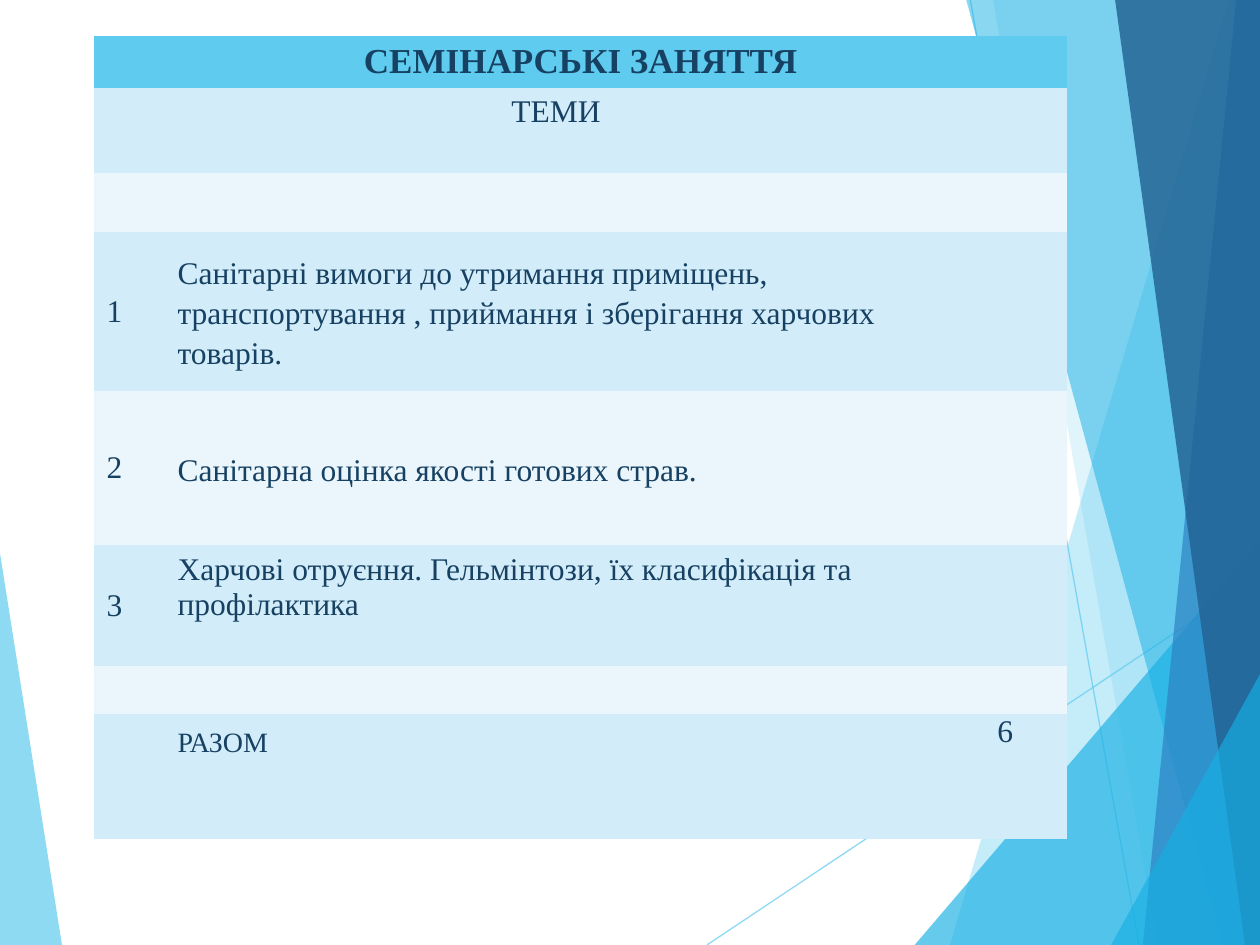
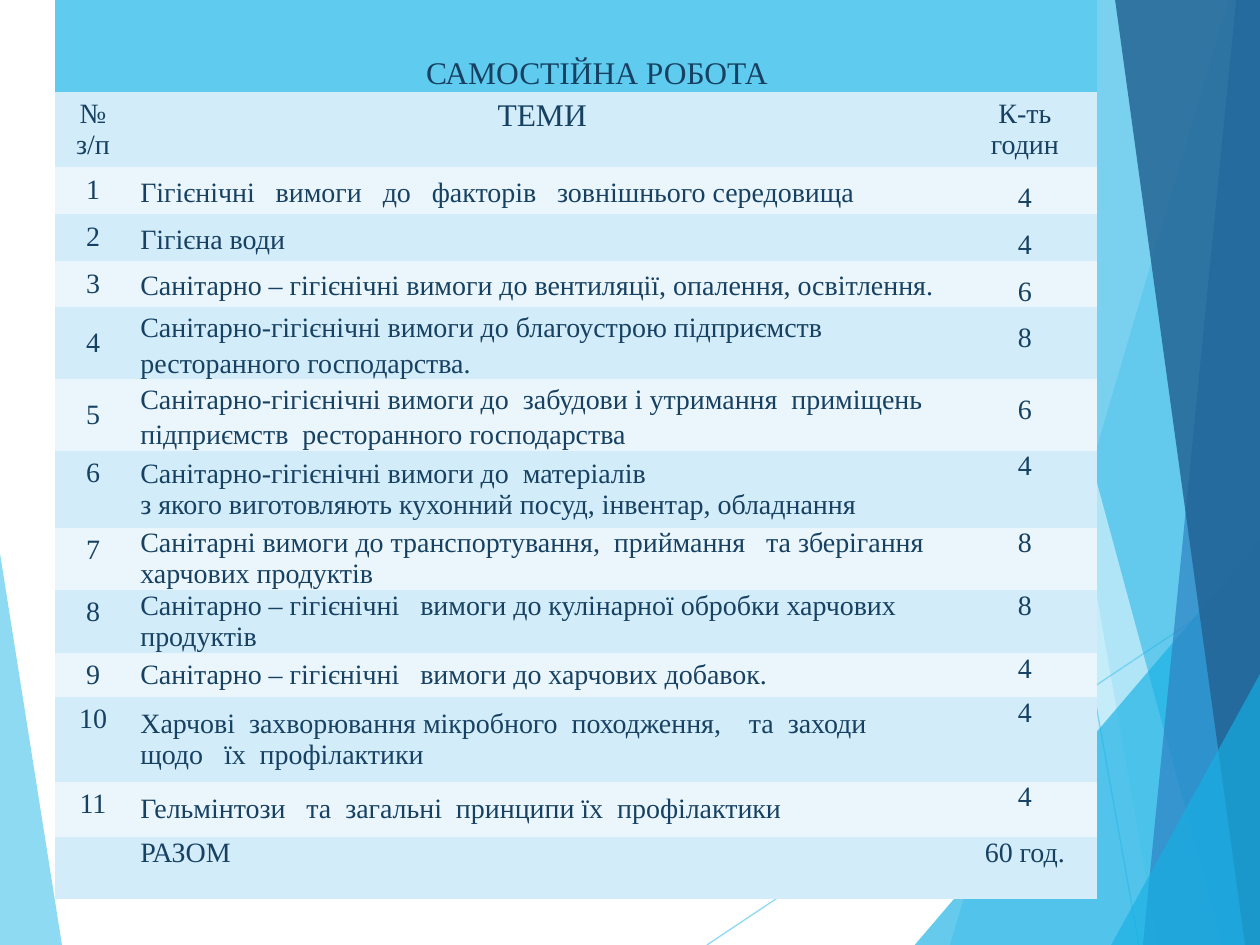
"""Build two slides listing the seminar topics and the independent work."""
from dataclasses import dataclass, replace

from lxml.etree import SubElement
from pptx import Presentation
from pptx.dml.color import RGBColor
from pptx.enum.shapes import MSO_CONNECTOR
from pptx.enum.text import MSO_ANCHOR, PP_ALIGN
from pptx.oxml.ns import qn
from pptx.util import Cm, Pt

WIDTH, HEIGHT = 25.4, 19.05
FONT = "Times New Roman"
INK, SKY, AZURE, BLUE, NAVY = "174162", "5FCBEF", "17B0E4", "2E83C3", "226292"
BANDS = ("EAF6FC", "D2ECF9")
PLAIN_TABLE = "{2D5ABB26-0587-4C30-8999-92F81FD0307C}"

# edge x, start point, x at the bottom, colour, opacity in percent
LEFT_SHARD = (0, (0, 11.15), 1.25, SKY, 70)
RIGHT_SHARDS = [
    (WIDTH, (24.77, 0), 19.15, SKY, 36),
    (WIDTH, (20.02, 0), 23.34, SKY, 20),
    (WIDTH, (WIDTH, 10.9), 18.44, AZURE, 66),
    (WIDTH, (19.48, 0), 24.64, AZURE, 50),
    (WIDTH, (24.92, 0), 23.04, BLUE, 70),
    (WIDTH, (22.48, 0), 25.1, NAVY, 82),
    (WIDTH, (WIDTH, 13.59), 22.4, AZURE, 66),
]
RAYS = [((14.25, HEIGHT), (WIDTH, 11.61)), ((19.56, 0), (22.96, HEIGHT))]


@dataclass(frozen=True)
class CellStyle:
    """Text settings of a table cell; insets are left, top, right, bottom."""
    size: int = 16
    align: PP_ALIGN = PP_ALIGN.LEFT
    anchor: MSO_ANCHOR = MSO_ANCHOR.TOP
    insets: tuple = (0.25, 0.13, 0.25, 0.13)
    spacing: float = 1.0
    after: int = 0
    bold: bool = False


HEADING = CellStyle(align=PP_ALIGN.CENTER)
NUMBER = replace(HEADING, anchor=MSO_ANCHOR.MIDDLE)
TOPIC = CellStyle(anchor=MSO_ANCHOR.MIDDLE, insets=(0.18, 0, 0.2, 0))
LOOSE_TOPIC = replace(TOPIC, spacing=1.15, after=10)
HOURS = replace(HEADING, insets=(0.18, 0, 0.18, 0))
LOOSE_HOURS = replace(HOURS, spacing=1.5)
TOTAL = replace(TOPIC, anchor=MSO_ANCHOR.TOP)

SEMINAR_TOPICS = [
    "Санітарні вимоги до утримання приміщень, транспортування , "
    "приймання і зберігання харчових товарів.",
    "Санітарна оцінка якості готових страв.",
    "Харчові отруєння. Гельмінтози, їх класифікація та профілактика",
]
LOOSE_COUNT = 5
SELF_STUDY_TOPICS = [
    ("Гігієнічні   вимоги   до   факторів   зовнішнього середовища", 4),
    ("Гігієна води", 4),
    ("Санітарно – гігієнічні вимоги до вентиляції, опалення, освітлення.", 6),
    ("Санітарно-гігієнічні вимоги до благоустрою підприємств "
     "ресторанного господарства.", 8),
    ("Санітарно-гігієнічні вимоги до  забудови і утримання  приміщень "
     "підприємств  ресторанного господарства", 6),
    ("Санітарно-гігієнічні вимоги до  матеріалів\n"
     "з якого виготовляють кухонний посуд, інвентар, обладнання", 4),
    ("Санітарні вимоги до транспортування,  приймання   та зберігання "
     "харчових продуктів", 8),
    ("Санітарно – гігієнічні   вимоги до кулінарної обробки харчових "
     "продуктів", 8),
    ("Санітарно – гігієнічні   вимоги до харчових добавок.", 4),
    ("Харчові  захворювання мікробного  походження,    та  заходи  "
     "щодо   їх  профілактики", 4),
    ("Гельмінтози   та  загальні  принципи їх  профілактики", 4),
]


def paint(color_format, color, opacity=100):
    """Set a colour from a hex string, with optional transparency."""
    color_format.rgb = RGBColor.from_string(color)
    if opacity < 100:
        for rgb in color_format._xFill.iter(qn("a:srgbClr")):
            SubElement(rgb, qn("a:alpha")).set("val", str(opacity * 1000))


def fill_with(fill, color, opacity=100):
    """Give a fill one solid colour."""
    fill.solid()
    paint(fill.fore_color, color, opacity)


def add_shard(slide, edge, start, bottom, color, opacity):
    """Draw a translucent shard between a slanted side and a slide edge."""
    corners = [(bottom, HEIGHT), (edge, HEIGHT), (edge, start[1])]
    outline = slide.shapes.build_freeform(Cm(start[0]), Cm(start[1]))
    outline.add_line_segments([(Cm(x), Cm(y)) for x, y in corners])
    shard = outline.convert_to_shape()
    shard.shadow.inherit = False
    fill_with(shard.fill, color, opacity)
    shard.line.fill.background()


def add_ray(slide, start, end):
    """Draw a thin translucent line."""
    ray = slide.shapes.add_connector(
        MSO_CONNECTOR.STRAIGHT, *(Cm(value) for value in start + end))
    ray.line.width = Pt(0.75)
    fill_with(ray.line.fill, SKY, 70)
    SubElement(ray._element.spPr, qn("a:effectLst"))


def add_backdrop(slide):
    """Draw the shards and rays that every slide shares."""
    add_shard(slide, *LEFT_SHARD)
    for start, end in RAYS:
        add_ray(slide, start, end)
    for shard in RIGHT_SHARDS:
        add_shard(slide, *shard)


def write(frame, text, style):
    """Write the lines of a text as styled paragraphs."""
    for index, line in enumerate(text.split("\n")):
        paragraph = frame.add_paragraph() if index else frame.paragraphs[0]
        paragraph.text = line
        paragraph.alignment = style.align
        paragraph.line_spacing = style.spacing
        paragraph.space_after = Pt(style.after)
        font = paragraph.font
        font.name, font.size, font.bold = FONT, Pt(style.size), style.bold
        fill_with(font.fill, INK)


def fill_cell(cell, text, style):
    """Set the insets, anchor and text of a table cell."""
    insets = style.insets if text else (0, 0, 0, 0)
    (cell.margin_left, cell.margin_top,
     cell.margin_right, cell.margin_bottom) = (Cm(value) for value in insets)
    cell.vertical_anchor = style.anchor
    if text:
        write(cell.text_frame, text, style)


def add_topic_table(slide, left, top, widths, heights, rows):
    """Add a banded table whose first row is one merged heading."""
    table = slide.shapes.add_table(
        len(heights), len(widths), Cm(left), Cm(top),
        Cm(sum(widths)), Cm(sum(heights))).table
    table.first_row = table.horz_banding = False
    table._tbl.tblPr.find(qn("a:tableStyleId")).text = PLAIN_TABLE
    for column, width in zip(table.columns, widths):
        column.width = Cm(width)
    for index, (row, height, entries) in enumerate(
            zip(table.rows, heights, rows)):
        row.height = Cm(height)
        for cell, (text, style) in zip(row.cells, entries):
            fill_with(cell.fill, BANDS[index % 2] if index else SKY)
            fill_cell(cell, text, style)
    table.cell(0, 0).merge(table.cell(0, len(widths) - 1))


def add_title(slide, text, left, top, width, height):
    """Add a centred title over the heading band."""
    box = slide.shapes.add_textbox(Cm(left), Cm(top), Cm(width), Cm(height))
    box.text_frame.word_wrap = True
    write(box.text_frame, text, replace(HEADING, size=18))


def add_seminars(slide):
    """Fill the slide of seminar topics."""
    blank = ("", HEADING)
    number, loose = replace(NUMBER, size=18, align=PP_ALIGN.LEFT), replace(
        LOOSE_TOPIC, size=18)
    last = replace(TOTAL, size=18, insets=(0.18, 0.15, 0.2, 0))
    total = replace(TOTAL, insets=(0.18, 0.28, 0.2, 0))
    rows = [
        [("СЕМІНАРСЬКІ ЗАНЯТТЯ", replace(HEADING, size=20, bold=True)),
         blank, blank],
        [blank, ("ТЕМИ", replace(HEADING, size=18)), blank],
        [blank] * 3,
    ]
    for index, (topic, style) in enumerate(
            zip(SEMINAR_TOPICS, (loose, loose, last)), 1):
        rows.append([(str(index), number), (topic, style), blank])
    rows += [[blank] * 3,
             [blank, ("РАЗОМ", total), ("6", replace(HOURS, size=18))]]
    add_topic_table(slide, 1.9, 0.73, (1.5, 15.62, 2.49),
                    (1.03, 1.71, 1.19, 3.21, 3.1, 2.44, 0.97, 2.52), rows)


def add_self_study(slide):
    """Fill the slide of independent work."""
    blank = ("", HEADING)
    rows = [[blank] * 3,
            [("№ з/п", HEADING), ("ТЕМИ", replace(HEADING, size=18)),
             ("К-ть годин", HEADING)]]
    for index, (topic, hours) in enumerate(SELF_STUDY_TOPICS, 1):
        styles = ((NUMBER, LOOSE_TOPIC, LOOSE_HOURS) if index <= LOOSE_COUNT
                  else (HEADING, TOPIC, HOURS))
        rows.append(list(zip((str(index), topic, str(hours)), styles)))
    rows.append([blank, ("РАЗОМ", TOTAL), ("60 год.", HOURS)])
    add_topic_table(slide, 1.1, 0, (1.55, 16.56, 2.9),
                    (1.85, 1.51, 0.95, 0.94, 0.94, 1.45, 1.43, 1.55, 1.25,
                     1.27, 0.87, 1.71, 1.11, 1.25), rows)
    add_title(slide, "САМОСТІЙНА РОБОТА", 5.66, 0.95, 12.75, 1.02)


def main():
    """Build and save the presentation."""
    deck = Presentation()
    deck.slide_width, deck.slide_height = Cm(WIDTH), Cm(HEIGHT)
    for add_content in (add_seminars, add_self_study):
        slide = deck.slides.add_slide(deck.slide_layouts[6])
        add_backdrop(slide)
        add_content(slide)
    deck.save("out.pptx")


if __name__ == "__main__":
    main()
